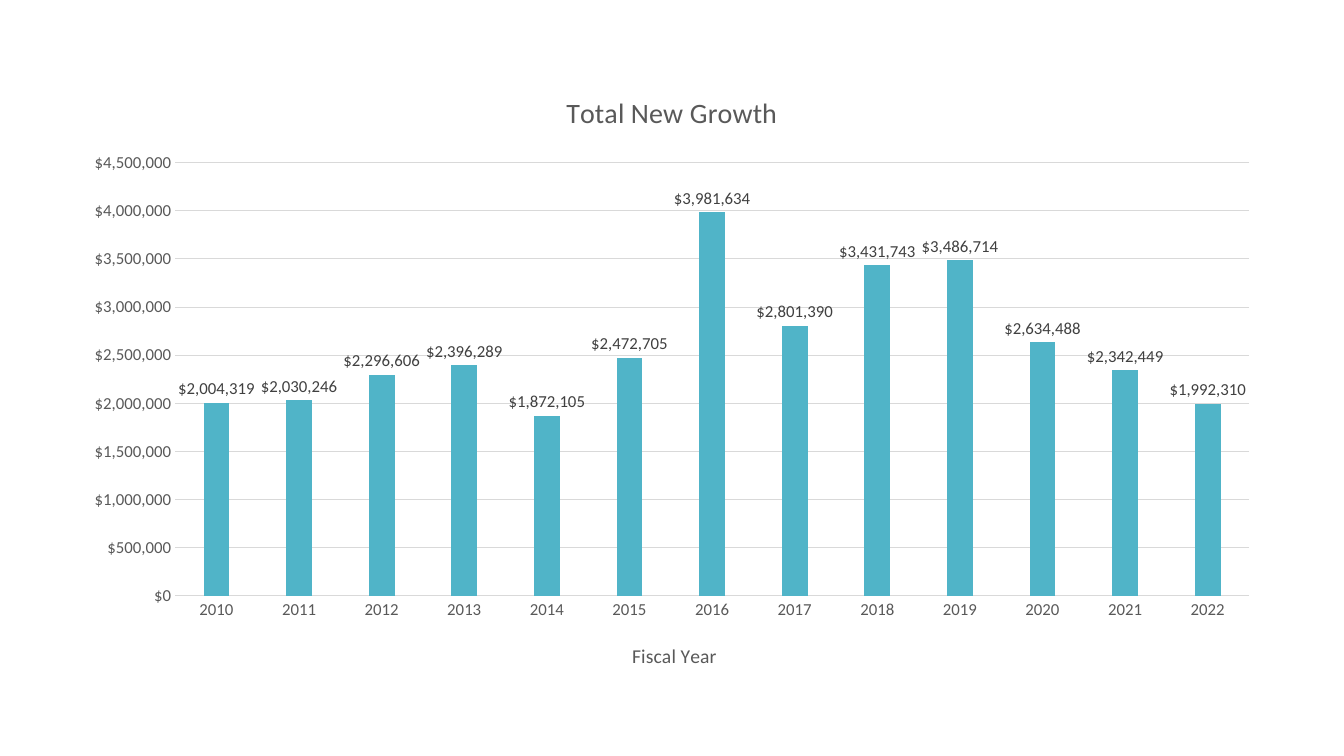
from lxml.etree import SubElement
from pptx import Presentation
from pptx.chart.data import CategoryChartData
from pptx.dml.color import RGBColor
from pptx.enum.chart import XL_CHART_TYPE, XL_LABEL_POSITION, XL_TICK_MARK
from pptx.oxml import parse_xml
from pptx.oxml.ns import nsdecls, qn
from pptx.util import Pt

HEADING = "Total New Growth"
YEAR_HEADING = "Fiscal Year"
FIRST_YEAR = 2010
GROWTH = [2004319, 2030246, 2296606, 2396289, 1872105, 2472705, 3981634,
          2801390, 3431743, 3486714, 2634488, 2342449, 1992310]
DOLLARS = '"$"#,##0'
FONT = "Calibri"
COLORS = {"bar": "50B4C8", "text": "595959", "label": "404040", "rule": "D9D9D9"}

SLIDE_SIZE = (960, 540)
CHART_BOX = (50.4, 50.4, 859, 438.5)
PLOT_LAYOUT = {"x": 0.087, "y": 0.15, "w": 0.893, "h": 0.706}
YEAR_HEADING_LAYOUT = {"x": 0.464, "y": 0.926}


def style_font(font, size=12, color="text"):
    font.name = FONT
    font.size = Pt(size)
    font.bold = False
    font.color.rgb = RGBColor.from_string(COLORS[color])


def write_title(title, text, size, color="text"):
    paragraph = title.text_frame.paragraphs[0]
    run = paragraph.add_run()
    run.text = text
    style_font(run.font, size, color)


def style_rule(line):
    line.color.rgb = RGBColor.from_string(COLORS["rule"])
    line.width = Pt(0.75)


def place(element, index, fractions):
    """Fix the position of a chart part as fractions of the chart's size."""
    layout = element.find(qn("c:layout"))
    if layout is None:
        layout = parse_xml(f"<c:layout {nsdecls('c')}/>")
        element.insert(index, layout)
    manual = SubElement(layout, qn("c:manualLayout"))
    if "w" in fractions:
        SubElement(manual, qn("c:layoutTarget")).set("val", "inner")
    for side in "xy":
        SubElement(manual, qn(f"c:{side}Mode")).set("val", "edge")
    for key, fraction in fractions.items():
        SubElement(manual, qn(f"c:{key}")).set("val", str(fraction))


def add_growth_chart(slide):
    growth_data = CategoryChartData(number_format=DOLLARS)
    growth_data.categories = [str(FIRST_YEAR + i) for i in range(len(GROWTH))]
    growth_data.add_series(HEADING, GROWTH)
    chart = slide.shapes.add_chart(
        XL_CHART_TYPE.COLUMN_CLUSTERED, *map(Pt, CHART_BOX), growth_data).chart
    style_font(chart.font)
    chart.has_legend = False
    chart.has_title = True
    write_title(chart.chart_title, HEADING, size=20)
    chart.chart_title.include_in_layout = False

    bars = chart.plots[0]
    bars.vary_by_categories = False
    bars.gap_width = 219
    bars.overlap = -27
    growth = bars.series[0]
    growth.format.fill.solid()
    growth.format.fill.fore_color.rgb = RGBColor.from_string(COLORS["bar"])
    labels = growth.data_labels
    labels.show_value = True
    labels.position = XL_LABEL_POSITION.OUTSIDE_END
    labels.number_format = DOLLARS
    labels.number_format_is_linked = False
    style_font(labels.font, color="label")

    years, dollars = chart.category_axis, chart.value_axis
    for axis in (years, dollars):
        axis.major_tick_mark = axis.minor_tick_mark = XL_TICK_MARK.NONE
        style_font(axis.tick_labels.font)
    style_rule(years.format.line)
    years.has_title = True
    write_title(years.axis_title, YEAR_HEADING, size=14)
    dollars.minimum_scale = 0
    dollars.maximum_scale = 4500000
    dollars.major_unit = 500000
    dollars.tick_labels.number_format = DOLLARS
    dollars.tick_labels.number_format_is_linked = False
    dollars.format.line.fill.background()
    style_rule(dollars.major_gridlines.format.line)

    plot_area = chart.element.find(f"{qn('c:chart')}/{qn('c:plotArea')}")
    place(plot_area, 0, PLOT_LAYOUT)
    place(years.axis_title.element, 1, YEAR_HEADING_LAYOUT)


def main():
    presentation = Presentation()
    presentation.slide_width, presentation.slide_height = map(Pt, SLIDE_SIZE)
    slide = presentation.slides.add_slide(presentation.slide_layouts[6])
    add_growth_chart(slide)
    presentation.save("out.pptx")


if __name__ == "__main__":
    main()
